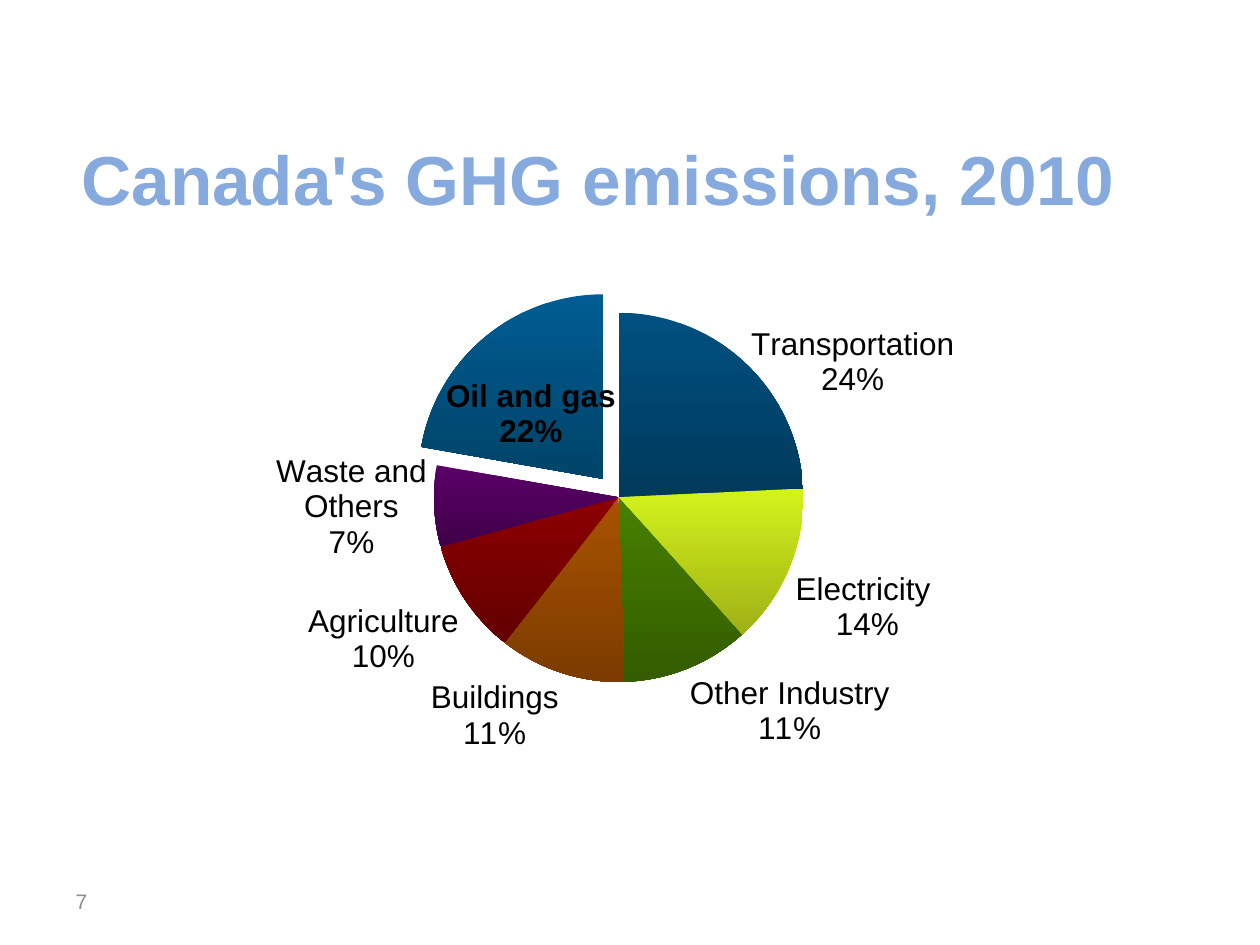
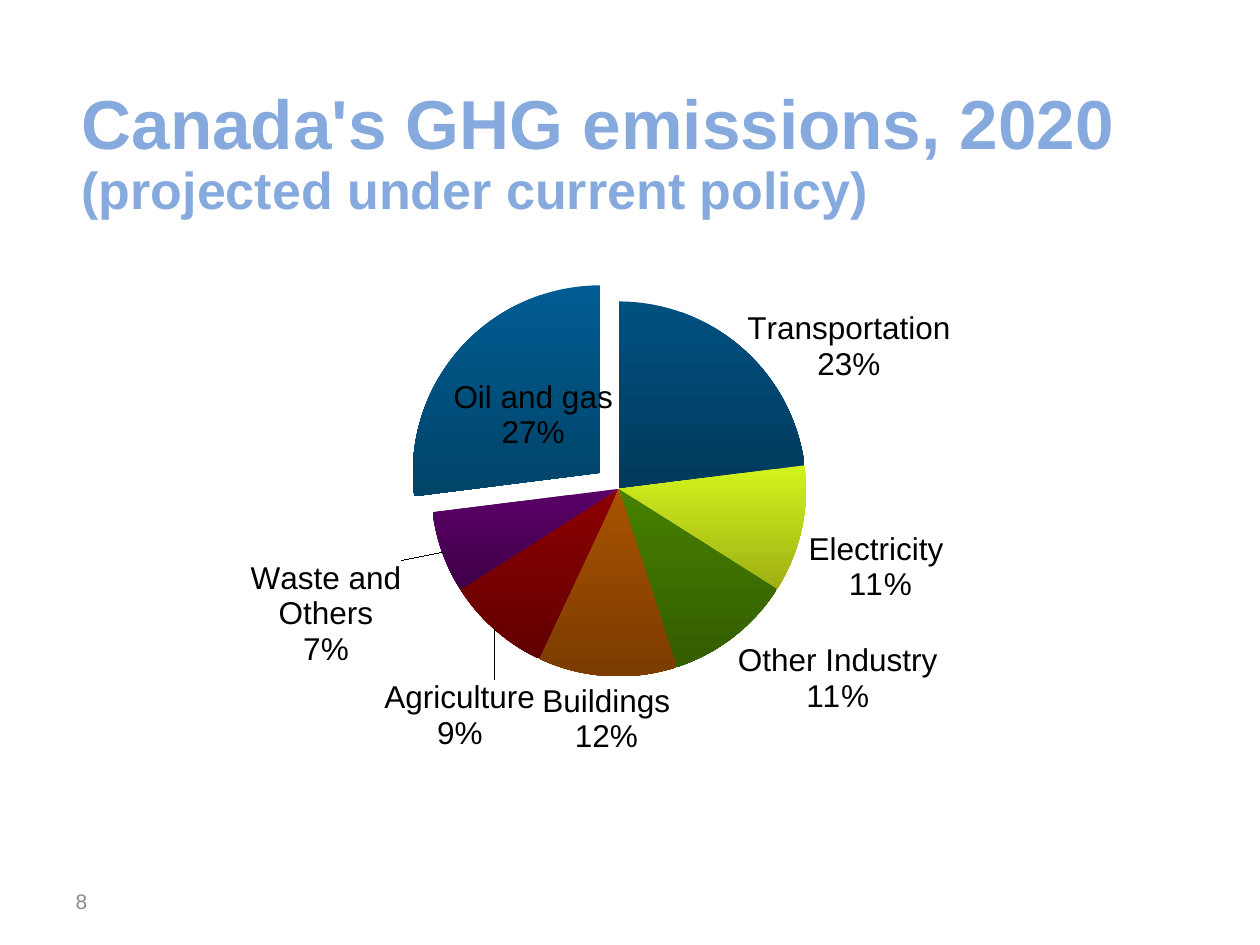
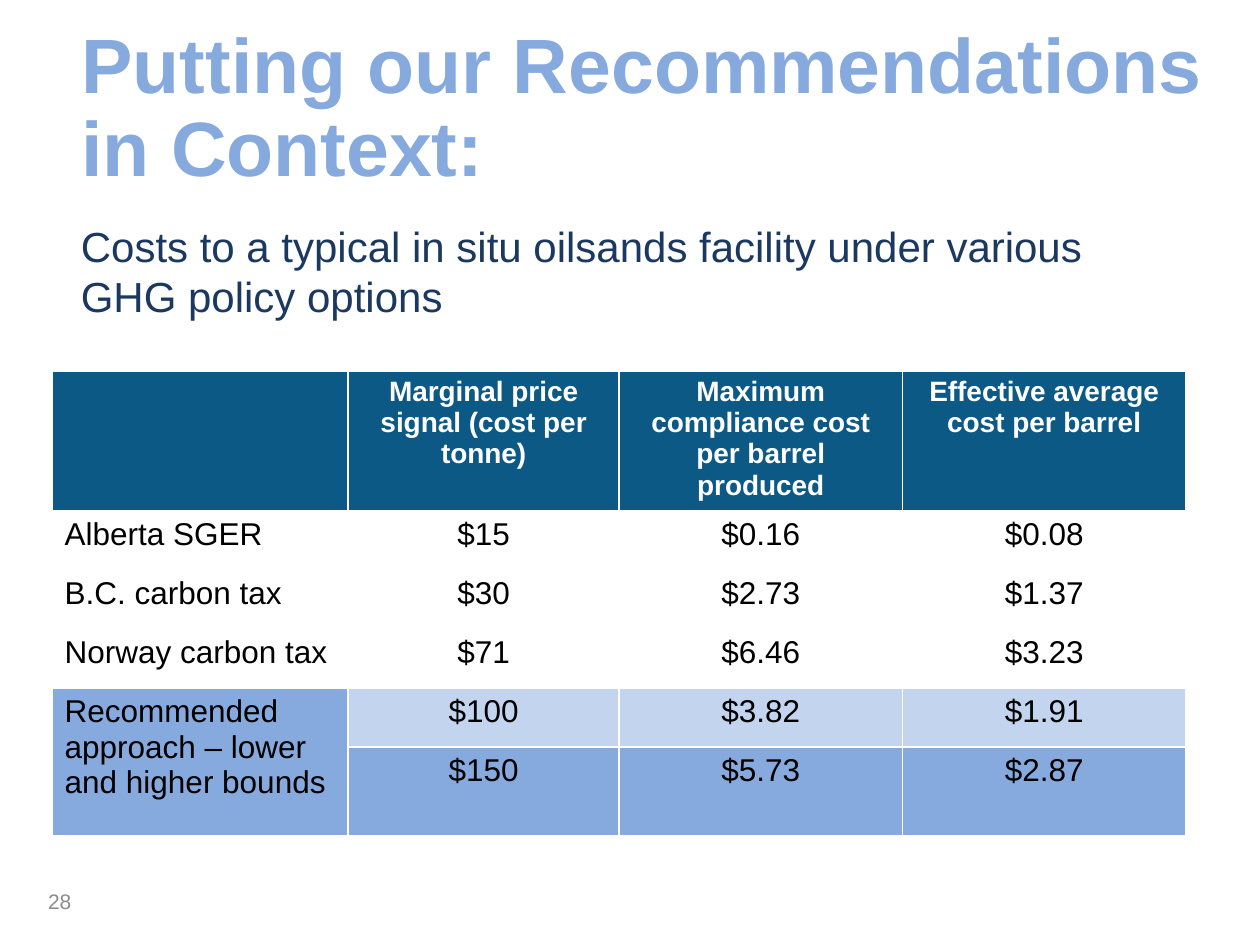
from lxml import etree
from pptx import Presentation
from pptx.chart.data import CategoryChartData
from pptx.dml.color import RGBColor
from pptx.enum.chart import XL_CHART_TYPE, XL_LABEL_POSITION
from pptx.enum.text import MSO_ANCHOR, PP_ALIGN
from pptx.oxml.ns import qn
from pptx.util import Cm, Pt

LEFT, CENTER, RIGHT = PP_ALIGN.LEFT, PP_ALIGN.CENTER, PP_ALIGN.RIGHT
TOP, MIDDLE, BOTTOM = MSO_ANCHOR.TOP, MSO_ANCHOR.MIDDLE, MSO_ANCHOR.BOTTOM
PIE = XL_CHART_TYPE.PIE
OUTSIDE = XL_LABEL_POSITION.OUTSIDE_END
TITLE_ONLY = 5

FONT = "Arial"
SKY, PALE, TEAL, NAVY = "86AADD", "C3D5EE", "0C5986", "1B3861"
GREY, BLACK, WHITE = "8C8C8C", "000000", "FFFFFF"

SECTORS = ["Transportation", "Electricity ", "Other Industry", "Buildings",
           "Agriculture", "Waste and Others", "Oil and gas"]
SECTOR_SHADES = [("005080", "003A5C"), ("D3F31C", "9FB015"),
                 ("468000", "345C00"), ("A85200", "7C3C00"),
                 ("8C0000", "620000"), ("5A0068", "400048"),
                 ("005C92", "004468")]
OIL = len(SECTORS) - 1

COSTS = [
    ["", "Marginal price signal (cost per tonne)",
     "Maximum compliance cost per barrel produced",
     "Effective average cost per barrel"],
    ["Alberta SGER", "$15", "$0.16", "$0.08"],
    ["B.C. carbon tax", "$30", "$2.73", "$1.37"],
    ["Norway carbon tax", "$71", "$6.46", "$3.23"],
    ["Recommended approach – lower and higher bounds",
     "$100", "$3.82", "$1.91"],
    ["", "$150", "$5.73", "$2.87"],
]
COST_COLUMNS = [5.97, 5.46, 5.71, 5.72]
COST_ROWS = [2.67, 1.19, 1.19, 1.19, 1.19, 1.78]
ROW_FILLS = [TEAL, WHITE, WHITE, WHITE, PALE, SKY]


def rgb(value):
    """Turn a hex string into a colour."""
    return RGBColor.from_string(value)


def style(font, size, color=BLACK, bold=False):
    """Format a font."""
    font.name, font.size, font.bold = FONT, Pt(size), bold
    font.color.rgb = rgb(color)


def write(tf, text, align=LEFT, anchor=TOP, spacing=None, **fmt):
    """Add a formatted run to the first paragraph of a text frame."""
    tf.word_wrap = True
    tf.vertical_anchor = anchor
    p = tf.paragraphs[0]
    p.alignment = align
    if spacing:
        p.line_spacing = spacing
    r = p.add_run()
    r.text = text
    style(r.font, **fmt)


def add_text(slide, box, text, **fmt):
    """Add a text box."""
    sp = slide.shapes.add_textbox(*map(Cm, box))
    write(sp.text_frame, text, **fmt)


def add_slide(prs, title_box, title_runs, number, number_box):
    """Add a slide with its title and slide number."""
    slide = prs.slides.add_slide(prs.slide_layouts[TITLE_ONLY])
    sp = slide.shapes.title
    sp.left, sp.top, sp.width, sp.height = map(Cm, title_box)
    for text, size in title_runs:
        write(sp.text_frame, text, anchor=BOTTOM, spacing=0.9,
              size=size, color=SKY, bold=True)
    add_text(slide, number_box, number, align=RIGHT, anchor=MIDDLE,
             size=12, color=GREY)
    return slide


def make_layout(**values):
    """Build a manual chart layout element."""
    layout = etree.Element(qn("c:layout"))
    manual = etree.SubElement(layout, qn("c:manualLayout"))
    for name, value in values.items():
        etree.SubElement(manual, qn(f"c:{name}")).set("val", str(value))
    return layout


def split_lines(labels):
    """Put the name and the percentage of labels on separate lines."""
    separator = etree.Element(qn("c:separator"))
    separator.text = "\n"
    labels.find(qn("c:showBubbleSize")).addnext(separator)


def label_sectors(series, moves, oil_bold):
    """Label each slice and shift the labels named in moves."""
    labels = series.data_labels
    labels.show_value = False
    labels.show_category_name = labels.show_percentage = True
    labels.number_format, labels.number_format_is_linked = "0%", False
    labels.position = OUTSIDE
    style(labels.font, 18)
    dLbls = series._element.find(qn("c:dLbls"))
    split_lines(dLbls)
    for index in moves:
        label = series.points[index].data_label
        style(label.font, 18, bold=oil_bold and index == OIL)
        label.position = OUTSIDE
    for dLbl in dLbls.findall(qn("c:dLbl")):
        idx = dLbl.find(qn("c:idx"))
        x, y = moves[int(idx.get("val"))]
        idx.addnext(make_layout(x=x, y=y))
        for name, shown in (("Val", 0), ("CatName", 1), ("Percent", 1)):
            dLbl.find(qn(f"c:show{name}")).set("val", str(shown))
        split_lines(dLbl)


def add_pie(slide, values, plot_box, moves, oil_bold=False):
    """Add the emissions pie with the oil and gas slice pulled out."""
    data = CategoryChartData()
    data.categories = SECTORS
    data.add_series("Series 1", values)
    box = map(Cm, (1.27, 4.5, 22.86, 11.28))
    chart = slide.shapes.add_chart(PIE, *box, data).chart
    chart.has_legend = chart.has_title = False
    style(chart.font, 18)
    series = chart.plots[0].series[0]
    for index, shades in enumerate(SECTOR_SHADES):
        fmt = series.points[index].format
        fmt.line.fill.background()
        fmt.fill.gradient()
        fmt.fill.gradient_angle = 270
        for stop, shade in zip(fmt.fill.gradient_stops, shades):
            stop.color.rgb = rgb(shade)
    for dPt in series._element.findall(qn("c:dPt")):
        idx = dPt.find(qn("c:idx"))
        if idx.get("val") == str(OIL):
            explosion = etree.Element(qn("c:explosion"), val="13")
            dPt.find(qn("c:spPr")).addprevious(explosion)
    label_sectors(series, moves, oil_bold)
    area = chart._chartSpace.find(".//" + qn("c:plotArea"))
    for old in area.findall(qn("c:layout")):
        area.remove(old)
    x, y, w, h = plot_box
    area.insert(0, make_layout(layoutTarget="inner", xMode="edge",
                               yMode="edge", x=x, y=y, w=w, h=h))


def set_borders(cell):
    """Give a cell white borders."""
    tcPr = cell._tc.get_or_add_tcPr()
    for side in "LRTB":
        ln = etree.SubElement(tcPr, qn(f"a:ln{side}"), w=str(Pt(1)))
        fill = etree.SubElement(ln, qn("a:solidFill"))
        etree.SubElement(fill, qn("a:srgbClr"), val=WHITE)


def add_cost_table(slide):
    """Add the table of policy costs."""
    box = map(Cm, (1.05, 7.49, sum(COST_COLUMNS), sum(COST_ROWS)))
    table = slide.shapes.add_table(len(COSTS), len(COST_COLUMNS), *box).table
    for column, width in zip(table.columns, COST_COLUMNS):
        column.width = Cm(width)
    for row, height in zip(table.rows, COST_ROWS):
        row.height = Cm(height)
    table.cell(4, 0).merge(table.cell(5, 0))
    for i, texts in enumerate(COSTS):
        head = i == 0
        for j, text in enumerate(texts):
            cell = table.cell(i, j)
            set_borders(cell)
            if head:
                cell.margin_top, cell.margin_bottom = Cm(0.1), Cm(0)
            cell.fill.solid()
            fill = SKY if i >= 4 and j == 0 else ROW_FILLS[i]
            cell.fill.fore_color.rgb = rgb(fill)
            if text:
                write(cell.text_frame, text, align=CENTER if j else LEFT,
                      size=16 if head else 18, bold=head,
                      color=WHITE if head else BLACK)


def main():
    """Build the deck."""
    prs = Presentation()
    prs.slide_width, prs.slide_height = Cm(25.4), Cm(19.05)
    title_box = (1.39, 1.55, 21.84, 3.02)
    number_box = (0.74, 17.65, 1.27, 1.02)

    slide = add_slide(prs, title_box, [("Canada's GHG emissions, 2010", 39.6)],
                      "7", number_box)
    add_pie(slide, [24, 14, 11, 11, 10, 7, 22], (0.32, 0.16, 0.34, 0.66),
            {0: (0, 0.07), OIL: (0.12, 0.21)}, oil_bold=True)

    slide = add_slide(prs, title_box,
                      [("Canada's GHG emissions, 2020 ", 39.6),
                       ("(projected under current policy)", 29.7)],
                      "8", number_box)
    add_pie(slide, [23, 11, 11, 12, 9, 7, 27], (0.32, 0.14, 0.34, 0.67),
            {0: (0, 0.07), 4: (0.04, 0.08), 5: (-0.03, 0.01),
             OIL: (0.14, 0.19)})

    slide = add_slide(prs, (1.39, 1.01, 23.22, 3.02),
                      [("Putting our Recommendations in Context:", 44)],
                      "28", (0.47, 17.65, 1.22, 1.02))
    add_cost_table(slide)
    add_text(slide, (1.38, 4.32, 22.53, 2.49),
             "Costs to a typical in situ oilsands facility under various "
             "GHG policy options", size=24, color=NAVY)
    prs.save("out.pptx")


if __name__ == "__main__":
    main()
